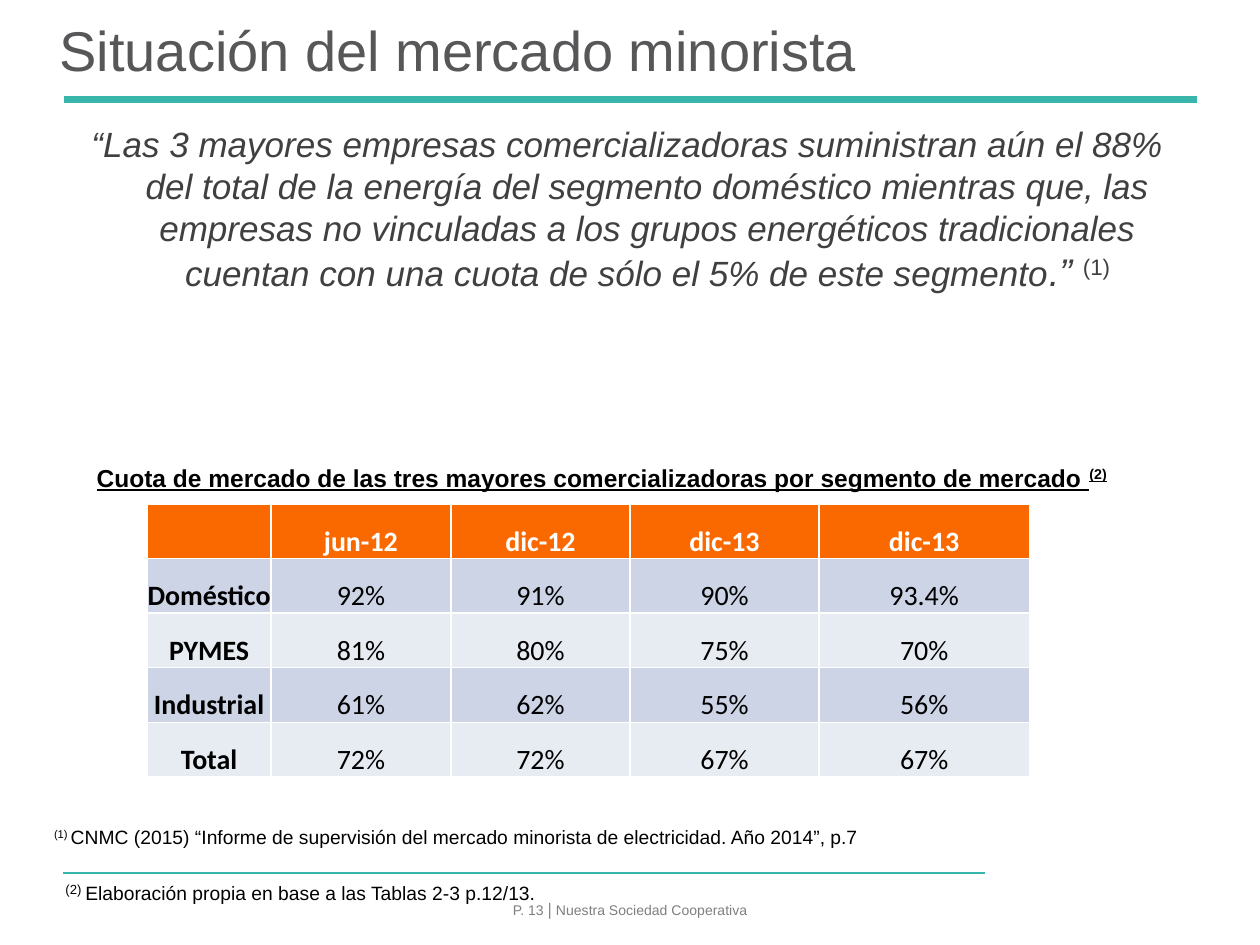
from lxml import etree
from pptx import Presentation
from pptx import util as u
from pptx.dml import color
from pptx.enum import shapes, text
from pptx.oxml import ns


def rgb(value):
    return color.RGBColor.from_string(value)


class SlideBuilder:
    font = "Arial"
    accent = "38B6AB"
    header_fill = "FA6900"
    band_fills = ("CCD4E5", "E7EBF2")

    def __init__(self, presentation):
        self.slide = presentation.slides.add_slide(presentation.slide_layouts[1])

    def place(self, shape, left, top, width, height):
        shape.left, shape.top = u.Cm(left), u.Cm(top)
        shape.width, shape.height = u.Cm(width), u.Cm(height)

    def run(self, paragraph, words, size, ink="000000", font=None, bold=False,
            italic=False, underline=False, raised=False):
        run = paragraph.add_run()
        run.text = words
        run.font.size = u.Pt(size)
        run.font.name = font or self.font
        run.font.color.rgb = rgb(ink)
        run.font.bold = bold
        run.font.italic = italic
        run.font.underline = underline
        if raised:
            run.font._element.set("baseline", "30000")

    def title(self, words):
        shape = self.slide.shapes.title
        self.place(shape, 0, 0, 25.4, 2)
        frame = shape.text_frame
        frame.auto_size = text.MSO_AUTO_SIZE.NONE
        frame.vertical_anchor = text.MSO_ANCHOR.MIDDLE
        frame.margin_left = u.Cm(1.2)
        paragraph = frame.paragraphs[0]
        paragraph.alignment = text.PP_ALIGN.LEFT
        self.run(paragraph, words, 32, "575658")

    def quote(self, runs):
        shape = self.slide.placeholders[1]
        self.place(shape, 1.22, 2.34, 22.86, 14.6)
        frame = shape.text_frame
        frame.auto_size = text.MSO_AUTO_SIZE.NONE
        paragraph = frame.paragraphs[0]
        properties = paragraph._p.get_or_add_pPr()
        properties.set("marL", str(u.Cm(0.81)))
        properties.set("indent", str(u.Cm(-0.81)))
        etree.SubElement(properties, ns.qn("a:buNone"))
        paragraph.alignment = text.PP_ALIGN.CENTER
        paragraph.space_before = u.Pt(0)
        for words, size, style in runs:
            self.run(paragraph, words, size, "404040", **style)

    def textbox(self, left, top, width, height, runs, align=text.PP_ALIGN.LEFT):
        shape = self.slide.shapes.add_textbox(
            u.Cm(left), u.Cm(top), u.Cm(width), u.Cm(height))
        shape.text_frame.word_wrap = True
        paragraph = shape.text_frame.paragraphs[0]
        paragraph.alignment = align
        for words, size, style in runs:
            self.run(paragraph, words, size, **style)

    def rule(self, left, right, top, weight):
        connector = self.slide.shapes.add_connector(
            shapes.MSO_CONNECTOR.STRAIGHT,
            u.Cm(left), u.Cm(top), u.Cm(right), u.Cm(top))
        connector.line.color.rgb = rgb(self.accent)
        connector.line.width = u.Pt(weight)
        etree.SubElement(connector._element.spPr, ns.qn("a:effectLst"))

    def table(self, left, top, widths, row_height, rows):
        table = self.slide.shapes.add_table(
            len(rows), len(widths), u.Cm(left), u.Cm(top),
            u.Cm(sum(widths)), u.Cm(row_height * len(rows))).table
        for column, width in zip(table.columns, widths):
            column.width = u.Cm(width)
        for i, row in enumerate(rows):
            for j, words in enumerate(row):
                cell = table.cell(i, j)
                cell.fill.solid()
                fill = self.band_fills[(i - 1) % 2] if i else self.header_fill
                cell.fill.fore_color.rgb = rgb(fill)
                cell.vertical_anchor = text.MSO_ANCHOR.BOTTOM
                cell.margin_left = cell.margin_right = 0
                cell.margin_top = cell.margin_bottom = 0
                if words:
                    paragraph = cell.text_frame.paragraphs[0]
                    paragraph.alignment = text.PP_ALIGN.CENTER
                    self.run(paragraph, words, 16, "000000" if i else "FFFFFF",
                             "Calibri", bold=i == 0 or j == 0)


def main():
    presentation = Presentation()
    presentation.slide_width = u.Cm(25.4)
    presentation.slide_height = u.Cm(19.05)
    builder = SlideBuilder(presentation)

    gray = {"ink": "7F7F7F"}
    builder.textbox(9.58, 17.98, 6.25, 0.84, [
        ("P. 13 ", 8, gray),
        ("| ", 10, {**gray, "font": "Times New Roman", "bold": True}),
        ("Nuestra Sociedad Cooperativa", 8, gray),
    ], text.PP_ALIGN.CENTER)
    builder.rule(1.27, 19.86, 17.6, 1)
    builder.rule(1.3, 24.13, 2.01, 4)

    builder.title("Situación del mercado minorista")
    builder.quote([
        ("“Las 3 mayores empresas comercializadoras suministran aún el 88% "
         "del total de la energía del segmento doméstico mientras que, las "
         "empresas no vinculadas a los grupos energéticos tradicionales "
         "cuentan con una cuota de sólo el 5% de este segmento", 20,
         {"italic": True}),
        (".” ", 22, {"italic": True}),
        ("(1)", 22, {"raised": True}),
    ])

    raised = {"raised": True}
    builder.textbox(0.84, 16.51, 18.8, 0.74, [
        ("(1) ", 11, raised),
        ("CNMC (2015) “Informe de supervisión del mercado minorista de "
         "electricidad. Año 2014”, p.7", 11, {}),
    ])
    heading = {"bold": True, "underline": True}
    builder.textbox(1.7, 9.2, 22.6, 0.86, [
        ("Cuota de mercado de las tres mayores comercializadoras por "
         "segmento de mercado ", 14, heading),
        ("(2)", 14, {**heading, **raised}),
    ])
    builder.textbox(1.07, 17.58, 18.8, 1.19, [
        ("(2) ", 13, raised),
        ("Elaboración propia en base a las Tablas 2-3 p.12/13.", 11, {}),
    ])
    builder.table(2.97, 10.16, (2.49, 3.63, 3.61, 3.81, 4.24), 1.1, [
        ("", "jun-12", "dic-12", "dic-13", "dic-13"),
        ("Doméstico", "92%", "91%", "90%", "93.4%"),
        ("PYMES", "81%", "80%", "75%", "70%"),
        ("Industrial", "61%", "62%", "55%", "56%"),
        ("Total", "72%", "72%", "67%", "67%"),
    ])
    presentation.save("out.pptx")


if __name__ == "__main__":
    main()
